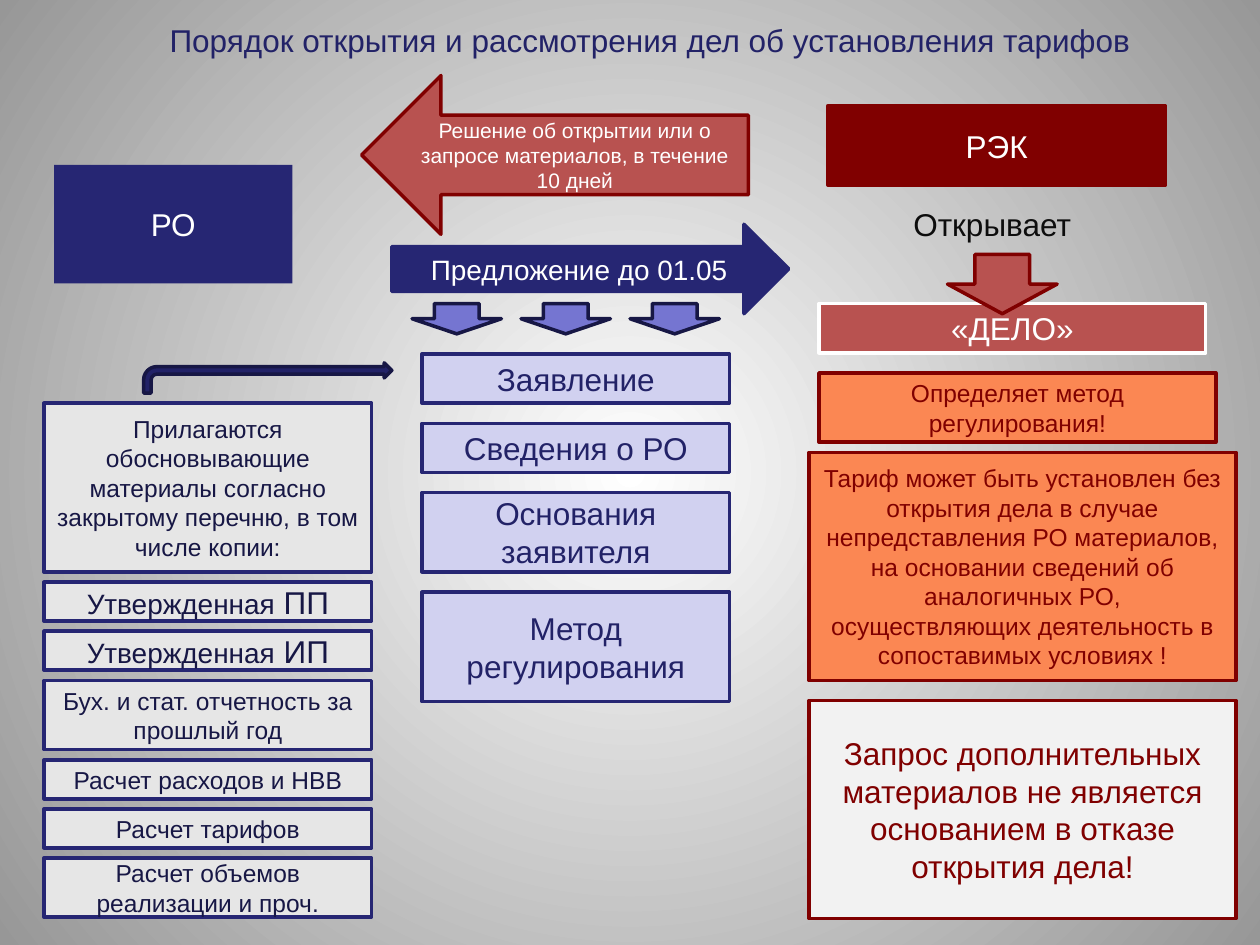
import dataclasses
import typing

import lxml.etree
import pptx
import pptx.dml.color
import pptx.enum.shapes
import pptx.enum.text
import pptx.oxml.ns
import pptx.util

KIND = pptx.enum.shapes.MSO_SHAPE
MID = pptx.enum.text.MSO_ANCHOR.MIDDLE
NAVY, DARK, INK = "262673", "171745", "222267"
WINE, RED, ORANGE = "800000", "B85250", "FB8753"
LILAC, GREY, WHITE = "D1D1F0", "E6E6E6", "FFFFFF"


class Run(typing.NamedTuple):
    text: str
    size: int


class Look(typing.NamedTuple):
    fill: str
    line: typing.Optional[str]
    ink: str = WHITE


@dataclasses.dataclass
class Box:
    left: float
    top: float
    width: float
    height: float
    look: Look
    runs: tuple[Run, ...] = ()
    kind: KIND = KIND.RECTANGLE


class Row(typing.NamedTuple):
    height: float
    runs: tuple[Run, ...]


def color(code: str) -> pptx.dml.color.RGBColor:
    return pptx.dml.color.RGBColor.from_string(code)


def apply(item: typing.Any, form: dict[str, typing.Any]) -> None:
    for name, value in form.items():
        setattr(item, name, value)


def place(left: float, top: float, width: float, height: float) -> dict[str, int]:
    names = ("left", "top", "width", "height")
    return dict(zip(names, map(pptx.util.Inches, (left, top, width, height))))


def write(shape: typing.Any, runs: tuple[Run, ...], ink: str) -> None:
    frame = shape.text_frame
    apply(frame, {"word_wrap": True, "vertical_anchor": MID})
    para = frame.paragraphs[0]
    para.alignment = pptx.enum.text.PP_ALIGN.CENTER
    for text, size in runs:
        run = para.add_run()
        run.text = text
        apply(run.font, {"name": "Arial", "size": pptx.util.Pt(size)})
        run.font.color.rgb = color(ink)


def draw(slide: typing.Any, box: Box) -> None:
    area = place(box.left, box.top, box.width, box.height)
    shape = slide.shapes.add_shape(box.kind, **area)
    shape.shadow.inherit = False
    shape.fill.solid()
    shape.fill.fore_color.rgb = color(box.look.fill)
    if box.look.line:
        shape.line.color.rgb = color(box.look.line)
        shape.line.width = pptx.util.Pt(2)
    else:
        shape.line.fill.background()
    if box.runs:
        write(shape, box.runs, box.look.ink)


def stack(left: float, top: float, width: float, gap: float,
          look: Look, rows: list[Row]) -> list[Box]:
    boxes = []
    for row in rows:
        boxes.append(Box(left, top, width, row.height, look, row.runs))
        top += row.height + gap
    return boxes


def paint(slide: typing.Any) -> None:
    fill = slide.background.fill
    fill.gradient()
    for stop, code, spot in zip(fill.gradient_stops, (WHITE, "979797"), (0, 1)):
        stop.color.rgb = color(code)
        stop.position = spot
    name = pptx.oxml.ns.qn
    grad = slide.element.find(".//" + name("a:gradFill"))
    grad.remove(grad.find(name("a:lin")))
    ring = lxml.etree.SubElement(grad, name("a:path"), {"path": "circle"})
    lxml.etree.SubElement(ring, name("a:fillToRect"), dict.fromkeys("ltrb", "50000"))


def main() -> None:
    deck = pptx.Presentation()
    apply(deck, {"slide_width": pptx.util.Inches(10),
                 "slide_height": pptx.util.Inches(7.5)})
    slide = deck.slides.add_slide(deck.slide_layouts[5])
    paint(slide)
    title = slide.shapes.title
    apply(title, place(0.83, 0, 8.66, 0.63))
    write(title, (Run("Порядок открытия и рассмотрения дел об установления тарифов", 18),), INK)
    label = slide.shapes.add_textbox(**place(6.81, 1.62, 2.13, 0.31))
    write(label, (Run("Открывает", 18),), "0D0D0D")

    alert = Look(ORANGE, WINE, WINE)
    arrow = Look(RED, WINE)
    boxes = [
        Box(0.43, 1.31, 1.89, 0.94, Look(NAVY, None), (Run("РО", 18),)),
        Box(6.57, 0.84, 2.68, 0.63, Look(WINE, WINE), (Run("РЭК", 18),)),
        Box(3.11, 1.78, 3.15, 0.71, Look(NAVY, NAVY),
            (Run("Предложение до 01.05", 16),), KIND.RIGHT_ARROW),
        Box(6.5, 2.41, 3.07, 0.39, Look(RED, WHITE), (Run("«ДЕЛО»", 18),)),
        Box(7.52, 2.02, 0.87, 0.47, arrow, kind=KIND.DOWN_ARROW),
        Box(1.14, 2.88, 1.97, 0.24, Look(INK, DARK), kind=KIND.BENT_ARROW),
        Box(2.87, 0.6, 3.07, 1.26, arrow,
            (Run("Решение об открытии или о запросе материалов, в течение 10 дней", 12),),
            KIND.LEFT_ARROW),
        Box(6.5, 2.96, 3.15, 0.55, alert, (Run("Определяет метод регулирования!", 14),)),
        Box(6.42, 3.59, 3.39, 1.81, alert,
            (Run("Тариф может быть установлен без открытия дела в случае "
                 "непредставления РО материалов, на основании сведений об "
                 "аналогичных РО, осуществляющих деятельность в "
                 "сопоставимых условиях !", 14),)),
        Box(6.42, 5.56, 3.39, 1.73, Look("F2F2F2", WINE, WINE),
            (Run("Запрос дополнительных материалов не является "
                 "основанием в отказе открытия дела!", 18),)),
    ]
    boxes += [Box(3.27 + 0.865 * step, 2.41, 0.71, 0.24, Look("7575D1", DARK),
                  kind=KIND.DOWN_ARROW) for step in range(3)]
    boxes += stack(3.35, 2.81, 2.44, 0.16, Look(LILAC, NAVY, INK), [
        Row(0.39, (Run("Заявление", 18),)),
        Row(0.39, (Run("Сведения о РО", 18),)),
        Row(0.63, (Run("Основания заявителя", 18),)),
        Row(0.87, (Run("Метод регулирования", 18),)),
    ])
    boxes += stack(0.35, 3.2, 2.6, 0.08, Look(GREY, NAVY, DARK), [
        Row(1.34, (Run("Прилагаются обосновывающие материалы согласно "
                       "закрытому перечню, в том числе копии:", 14),)),
        Row(0.31, (Run("Утвержденная", 16), Run(" ПП", 18))),
        Row(0.31, (Run("Утвержденная", 16), Run(" ИП", 18))),
        Row(0.55, (Run("Бух. и стат. отчетность за прошлый год", 14),)),
        Row(0.31, (Run("Расчет расходов и НВВ", 14),)),
        Row(0.31, (Run("Расчет тарифов", 14),)),
        Row(0.47, (Run("Расчет объемов реализации и проч.", 14),)),
    ])
    for box in boxes:
        draw(slide, box)
    deck.save("out.pptx")


if __name__ == "__main__":
    main()
